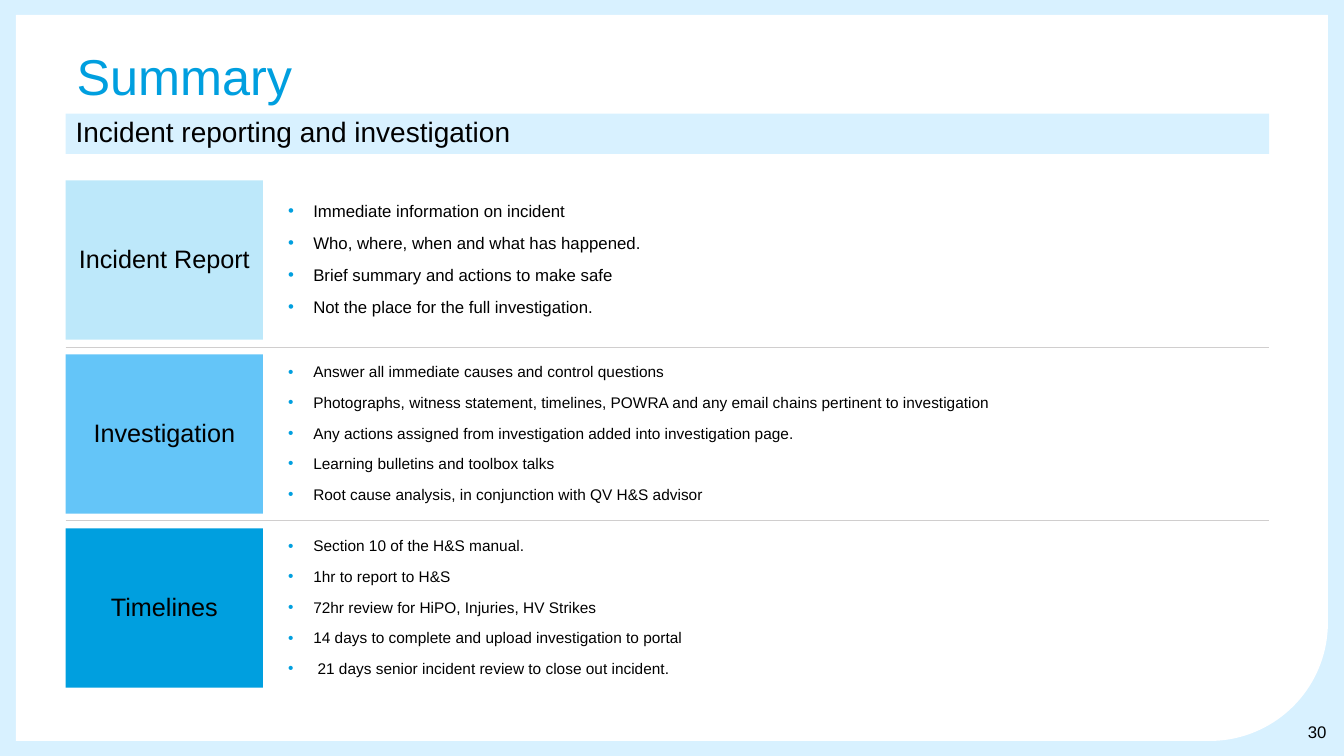
from lxml import etree
from pptx import Presentation
from pptx import util as u
from pptx.dml.color import RGBColor
from pptx.enum import shapes, text
from pptx.oxml.ns import qn

KIND = shapes.MSO_SHAPE
ALIGN = text.PP_ALIGN
MID, TOP = text.MSO_ANCHOR.MIDDLE, text.MSO_ANCHOR.TOP
BLUE, PALE = "009FDF", "D8F1FF"


def shade(hue):
    return RGBColor.from_string(hue)


def apply(item, form):
    for key, val in form.items():
        setattr(item, key, val)


class Page:
    """Style and current slide, with a method for each kind of element."""

    font = "Arial"
    ink = "000000"

    def __init__(self, deck):
        self.slide = deck.slides.add_slide(deck.slide_layouts[5])
        self.items = self.slide.shapes
        fill = self.slide.background.fill
        fill.solid()
        fill.fore_color.rgb = shade(PALE)

    def label(self, shape, lines, size, hue=None, align=ALIGN.LEFT, anchor=TOP,
              bullet=False, gap=10, space=0.9):
        frame = shape.text_frame
        apply(frame, {"word_wrap": True, "auto_size": text.MSO_AUTO_SIZE.NONE,
                      "vertical_anchor": anchor})
        for i, line in enumerate(lines):
            para = frame.add_paragraph() if i else frame.paragraphs[0]
            apply(para, {"alignment": align, "line_spacing": space, "space_before": u.Pt(gap)})
            run = para.add_run()
            run.text = line
            apply(run.font, {"name": self.font, "size": u.Pt(size)})
            run.font.color.rgb = shade(hue or self.ink)
            if bullet:
                self.dot(para)

    def dot(self, para):
        props = para._p.get_or_add_pPr()
        for key, val in {"marL": u.Pt(18), "indent": u.Pt(-18)}.items():
            props.set(key, str(int(val)))
        tint = etree.SubElement(props, qn("a:buClr"))
        etree.SubElement(tint, qn("a:srgbClr"), val=BLUE)
        etree.SubElement(props, qn("a:buFont"), typeface=self.font)
        etree.SubElement(props, qn("a:buChar"), char="•")

    def title(self, line, box, **form):
        shape = self.items.title
        self.items.element.append(shape.element)
        apply(shape, dict(zip(("left", "top", "width", "height"), map(u.Pt, box))))
        self.label(shape, [line], **form)

    def block(self, box, hue, lines=(), kind=KIND.RECTANGLE, **form):
        shape = self.items.add_shape(kind, *map(u.Pt, box))
        shape.shadow.inherit = False
        shape.fill.solid()
        shape.fill.fore_color.rgb = shade(hue)
        shape.line.fill.background()
        if lines:
            self.label(shape, lines, **form)
        return shape

    def words(self, box, lines, **form):
        self.label(self.items.add_textbox(*map(u.Pt, box)), lines, **form)

    def rule(self, left, right, y):
        line = self.items.add_connector(shapes.MSO_CONNECTOR.STRAIGHT,
                                        *map(u.Pt, (left, y, right, y)))
        line.line.color.rgb = shade("D0CECE")
        line.line.width = u.Pt(0.5)
        etree.SubElement(line._element.spPr, qn("a:effectLst"))


ROWS = [
    ("Incident Report", "BDE8FA", 12, [
        "Immediate information on incident",
        "Who, where, when and what has happened.",
        "Brief summary and actions to make safe",
        "Not the place for the full investigation."]),
    ("Investigation", "64C5F8", 11, [
        "Answer all immediate causes and control questions",
        "Photographs, witness statement, timelines, POWRA and any email chains "
        "pertinent to investigation",
        "Any actions assigned from investigation added into investigation page.",
        "Learning bulletins and toolbox talks",
        "Root cause analysis, in conjunction with QV H&S advisor"]),
    ("Timelines", BLUE, 11, [
        "Section 10 of the H&S manual.",
        "1hr to report to H&S",
        "72hr review for HiPO, Injuries, HV Strikes",
        "14 days to complete and upload investigation to portal",
        " 21 days senior incident review to close out incident."]),
]


def main():
    deck = Presentation()
    apply(deck, {"slide_width": u.Pt(960), "slide_height": u.Pt(540)})
    page = Page(deck)
    left, right = 46.9, 906.5
    top, step, high = 128.8, 124.3, 113.8

    panel = page.block((11.4, 10.7, 937.2, 518.6), "FFFFFF", kind=KIND.ROUND_1_RECTANGLE)
    panel.adjustments[0] = 0.163
    panel._element.spPr.xfrm.set("flipV", "1")
    for i in range(1, len(ROWS)):
        page.rule(left, right, 248.2 + 123.8 * (i - 1))

    page.block((left, 81.2, right - left, 28.8), PALE,
               ["Incident reporting and investigation"], size=20)
    page.title("Summary", (47.5, 33.8, 484.6, 41), size=36, hue=BLUE)
    for i, (name, hue, size, points) in enumerate(ROWS):
        y = top + i * step
        page.words((198.7, y, right - 198.7, high), points, size=size, anchor=MID, bullet=True)
        page.block((left, y, 141, high), hue, [name], size=18,
                   align=ALIGN.CENTER, anchor=MID)
    page.words((920.9, 516.4, 33.8, 13), ["30"], size=12, align=ALIGN.RIGHT,
               anchor=MID, gap=0, space=1.0)
    deck.save("out.pptx")


if __name__ == "__main__":
    main()
